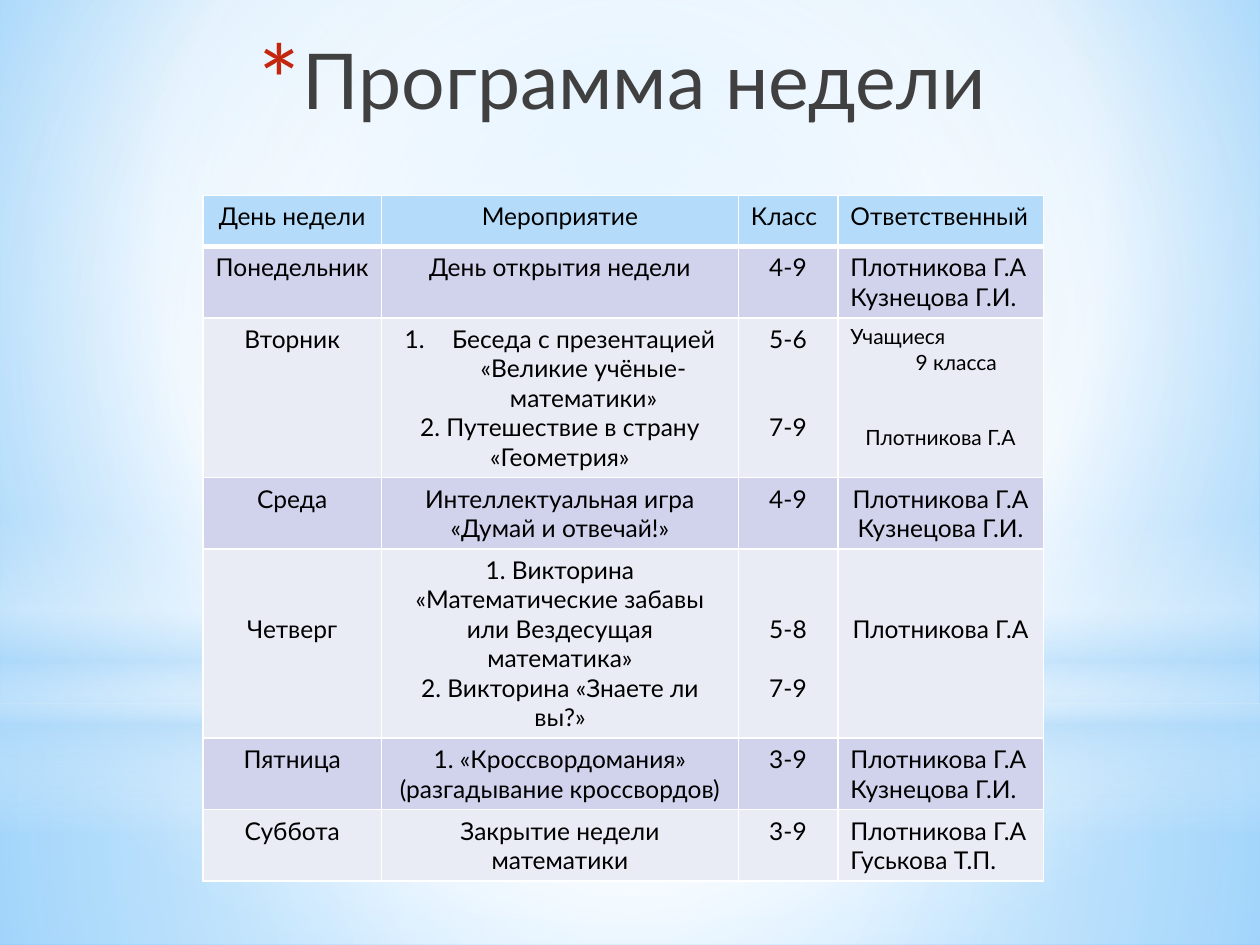
import dataclasses

import pptx
import pptx.dml.color
import pptx.enum.shapes
import pptx.enum.text
import pptx.oxml
import pptx.oxml.ns
import pptx.util

Pt = pptx.util.Pt
Shape = pptx.enum.shapes.MSO_SHAPE
Align = pptx.enum.text.PP_ALIGN
Anchor = pptx.enum.text.MSO_ANCHOR

COLORS = {
    "white": "FFFFFF",
    "sky": "B4DCFA",
    "sky_mid": "9ED5FF",
    "sky_deep": "5BB9FF",
    "band_dark": "D0D3EB",
    "band_light": "E9EBF5",
    "title": "404040",
    "star": "C3260C",
    "text": "000000",
}
NAMESPACE = pptx.oxml.ns.nsdecls("a")
CENTRE = (50, 50, 50, 50)


@dataclasses.dataclass
class Line:
    """One table paragraph; gap is the number of empty lines above it."""
    text: str
    align: Align = Align.CENTER
    gap: int = 0
    size: int = 14
    indent: int = 0
    numbered: bool = False


def left(text, **options):
    return Line(text, Align.LEFT, **options)


def gradient_xml(stops, focus=None):
    """Stops are (position %, colour name, opacity %); no focus means top to bottom."""
    marks = "".join(
        f'<a:gs pos="{position * 1000}"><a:srgbClr val="{COLORS[color]}">'
        f'<a:alpha val="{opacity * 1000}"/></a:srgbClr></a:gs>'
        for position, color, opacity in stops)
    if focus:
        sides = " ".join(f'{side}="{value * 1000}"' for side, value in zip("ltrb", focus))
        direction = f'<a:path path="circle"><a:fillToRect {sides}/></a:path>'
    else:
        direction = '<a:lin ang="5400000" scaled="0"/>'
    return pptx.oxml.parse_xml(
        f'<a:gradFill {NAMESPACE} rotWithShape="1"><a:gsLst>{marks}</a:gsLst>{direction}</a:gradFill>')


class Builder:
    font = "Lato"
    line_height = 1.2
    cell_margin = 3.6

    def __init__(self, page):
        self.page = page

    def color(self, name):
        return pptx.dml.color.RGBColor.from_string(COLORS[name])

    def span(self, para, text, size, color):
        span = para.add_run()
        span.text = text
        span.font.name = self.font
        span.font.size = Pt(size)
        span.font.bold = False
        span.font.color.rgb = self.color(color)

    def bullet(self, para, indent, marks):
        properties = para._p.get_or_add_pPr()
        properties.set("marL", str(Pt(indent)))
        properties.set("indent", str(-Pt(indent)))
        for mark in pptx.oxml.parse_xml(f"<a:pPr {NAMESPACE}>{marks}</a:pPr>"):
            properties.append(mark)

    def background(self, stops, focus):
        fill = self.page.background.fill
        fill.solid()
        solid = self.page.element.find(".//" + pptx.oxml.ns.qn("p:bgPr"))[0]
        solid.getparent().replace(solid, gradient_xml(stops, focus))

    def glow(self, kind, top, height, stops, focus=None):
        box = self.page.shapes.add_shape(kind, 0, Pt(top), Pt(720), Pt(height))
        box.shadow.inherit = False
        box.line.fill.background()
        box.fill.solid()
        solid = box.element.spPr.find(pptx.oxml.ns.qn("a:solidFill"))
        solid.getparent().replace(solid, gradient_xml(stops, focus))

    def title(self, text, x, y, width, height):
        box = self.page.shapes.title
        box.left, box.top, box.width, box.height = Pt(x), Pt(y), Pt(width), Pt(height)
        box.element.getparent().append(box.element)
        frame = box.text_frame
        frame.vertical_anchor = Anchor.TOP
        frame.word_wrap = True
        para = frame.paragraphs[0]
        para.alignment = Align.CENTER
        self.bullet(para, 25.2,
                    f'<a:buClr><a:srgbClr val="{COLORS["star"]}"/></a:buClr>'
                    '<a:buSzPct val="128000"/>'
                    f'<a:buFont typeface="{self.font}"/><a:buChar char="*"/>')
        self.span(para, text, 44, "title")

    def borders(self, cell, bottom):
        properties = cell._tc.get_or_add_tcPr()
        for side, width in (("L", 1), ("R", 1), ("T", 1), ("B", bottom)):
            properties.append(pptx.oxml.parse_xml(
                f'<a:ln{side} {NAMESPACE} w="{Pt(width)}"><a:solidFill>'
                f'<a:srgbClr val="{COLORS["white"]}"/></a:solidFill></a:ln{side}>'))

    def cell(self, cell, lines, fill, bottom):
        self.borders(cell, bottom)
        cell.fill.solid()
        cell.fill.fore_color.rgb = self.color(fill)
        frame = cell.text_frame
        for index, line in enumerate(lines):
            para = frame.paragraphs[0] if index == 0 else frame.add_paragraph()
            para.alignment = line.align
            space = line.gap * line.size * self.line_height
            if index == 0:
                cell.margin_top = Pt(self.cell_margin + space)
            elif space:
                para.space_before = Pt(space)
            if line.numbered:
                self.bullet(para, line.indent, '<a:buFont typeface="+mj-lt"/>'
                                               '<a:buAutoNum type="arabicPeriod"/>')
            elif line.indent:
                para._p.get_or_add_pPr().set("marL", str(Pt(line.indent)))
            self.span(para, line.text, line.size, "text")

    def table(self, x, y, widths, heights, rows):
        frame = self.page.shapes.add_table(
            len(rows), len(widths), Pt(x), Pt(y), Pt(sum(widths)), Pt(sum(heights)))
        table = frame.table
        table.first_row = True
        table.horz_banding = False
        for column, width in zip(table.columns, widths):
            column.width = Pt(width)
        for index, (row, height, cells) in enumerate(zip(table.rows, heights, rows)):
            row.height = Pt(height)
            fill = ("band_light", "band_dark")[index % 2] if index else "sky"
            for cell, lines in zip(row.cells, cells):
                self.cell(cell, lines, fill, bottom=1 if index else 3)


PAIR = "Плотникова Г.А Кузнецова Г.И."
ROWS = [
    [[Line("День недели")], [Line("Мероприятие")], [left("Класс")], [left("Ответственный")]],
    [[Line("Понедельник")], [Line("День открытия недели")], [Line("4-9")], [left(PAIR)]],
    [[Line("Вторник")],
     [Line("Беседа с презентацией «Великие учёные-математики»", indent=27, numbered=True),
      Line("2. Путешествие в страну «Геометрия»")],
     [Line("5-6"), Line("7-9", gap=2)],
     [left("Учащиеся", size=12), Line("9 класса", size=12, indent=18),
      Line("Плотникова Г.А", size=12, gap=2)]],
    [[Line("Среда")], [Line("Интеллектуальная игра «Думай и отвечай!»")],
     [Line("4-9")], [Line(PAIR)]],
    [[Line("Четверг", gap=2)],
     [Line("1. Викторина «Математические забавы или Вездесущая математика»"),
      Line("2. Викторина «Знаете ли вы?»")],
     [Line("5-8", gap=2), Line("7-9", gap=1)],
     [Line("Плотникова Г.А", gap=2)]],
    [[Line("Пятница")], [Line("1. «Кроссвордомания» (разгадывание кроссвордов)")],
     [Line("3-9")], [left(PAIR)]],
    [[Line("Суббота")], [Line("Закрытие недели математики")],
     [Line("3-9")], [left("Плотникова Г.А Гуськова Т.П.")]],
]


def main():
    deck = pptx.Presentation()
    deck.slide_width, deck.slide_height = Pt(720), Pt(540)
    builder = Builder(deck.slides.add_slide(deck.slide_layouts[5]))
    builder.background([(0, "sky_mid", 100), (60, "white", 100), (100, "sky_deep", 100)],
                       (20, 10, 20, 60))
    builder.glow(Shape.RECTANGLE, 401.8, 138.2,
                 [(0, "white", 91), (37, "white", 76), (100, "sky", 79)], CENTRE)
    builder.glow(Shape.RECTANGLE, 0, 401.8,
                 [(0, "white", 89), (48, "white", 62), (100, "sky", 79)], CENTRE)
    builder.glow(Shape.RECTANGLE, 296.6, 180,
                 [(0, "white", 0), (29, "white", 30), (45, "sky", 40),
                  (55, "white", 26), (65, "sky", 60), (100, "white", 0)])
    builder.glow(Shape.OVAL, 126, 401.8, [(0, "white", 100), (56, "white", 0)], CENTRE)
    builder.title("Программа недели", 99.4, 15.1, 512.6, 90)
    builder.table(115.9, 111.6, [102.2, 203.8, 56.9, 117.4],
                  [29.2, 40.6, 91.2, 40.6, 108, 40.6, 40.6], ROWS)
    deck.save("out.pptx")


if __name__ == "__main__":
    main()
